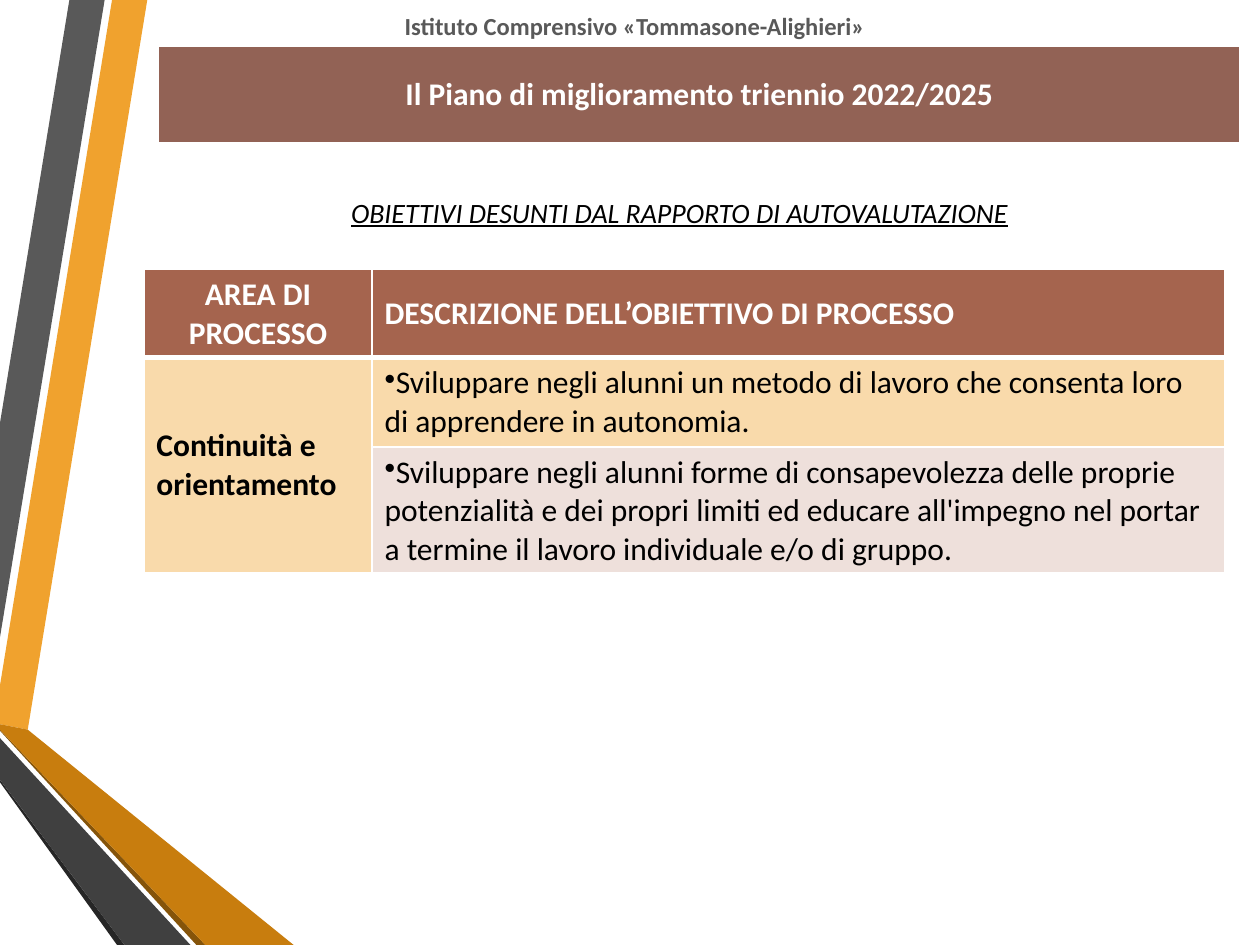
from lxml.etree import SubElement
from pptx import Presentation
from pptx.dml.color import RGBColor
from pptx.enum.text import MSO_ANCHOR, MSO_AUTO_SIZE, PP_ALIGN
from pptx.oxml.ns import qn
from pptx.util import Cm, Pt

BANDS = [
    ("F0A22E", [(0, 13.82), (0, 14.6), (0.56, 14.71), (2.97, 0), (2.26, 0)]),
    ("595959", [(2.11, 0), (1.4, 0), (0, 8.53), (0, 12.85)]),
    ("262626", [(0, 15.72), (0, 15.77), (2.36, 19.05), (2.51, 19.05)]),
    ("85540A", [(0, 14.71), (0, 14.73), (3.96, 19.05), (4.14, 19.05)]),
    ("C87D0E", [(0, 14.71), (4.14, 19.05), (5.92, 19.05), (0.56, 14.71), (0, 14.6)]),
    ("404040", [(0, 15.72), (2.51, 19.05), (3.84, 19.05), (0, 14.88)]),
]


def color(code):
    """Turn a hex string into a colour."""
    return RGBColor.from_string(code)


def add_band(slide, fill, points):
    """Draw one filled polygon of the side ribbon."""
    dots = [(Cm(x), Cm(y)) for x, y in points]
    build = slide.shapes.build_freeform(*dots[0])
    build.add_line_segments(dots[1:], close=True)
    band = build.convert_to_shape()
    band.shadow.inherit = False
    band.fill.solid()
    band.fill.fore_color.rgb = color(fill)
    band.line.fill.background()


def add_run(para, text, size, ink, bold=False, slant=False, align=PP_ALIGN.LEFT):
    """Add a styled run to a paragraph."""
    para.alignment = align
    run = para.add_run()
    run.text = text
    font = run.font
    font.name, font.size, font.bold = "Calibri", Pt(size), bold
    font.italic = font.underline = slant
    font.color.rgb = color(ink)


def add_label(slide, box, text, size, ink, **style):
    """Add a centred line of text."""
    frame = slide.shapes.add_textbox(*map(Cm, box)).text_frame
    frame.word_wrap = True
    frame.auto_size = MSO_AUTO_SIZE.SHAPE_TO_FIT_TEXT
    add_run(frame.paragraphs[0], text, size, ink, align=PP_ALIGN.CENTER, **style)


def add_grid(slide, left, top, cols, rows):
    """Add a plain table with the given column and row sizes."""
    box = map(Cm, (left, top, sum(cols), sum(rows)))
    table = slide.shapes.add_table(len(rows), len(cols), *box).table
    table.first_row = table.horz_banding = False
    for col, width in zip(table.columns, cols):
        col.width = Cm(width)
    for row, height in zip(table.rows, rows):
        row.height = Cm(height)
    return table


def set_edges(cell, base=1):
    """Give a cell white borders with a chosen bottom width."""
    props = cell._tc.get_or_add_tcPr()
    for side, width in zip("LRTB", (1, 1, 1, base)):
        line = SubElement(props, qn(f"a:ln{side}"), w=str(Pt(width)))
        SubElement(SubElement(line, qn("a:solidFill")), qn("a:srgbClr"), val="FFFFFF")


def fill_cell(cell, fill, text, ink, bullet=False, **style):
    """Fill a cell and write its text."""
    cell.fill.solid()
    cell.fill.fore_color.rgb = color(fill)
    cell.vertical_anchor = MSO_ANCHOR.MIDDLE
    para = cell.text_frame.paragraphs[0]
    if bullet:
        props = para._p.get_or_add_pPr()
        props.set("marL", "0")
        props.set("indent", "0")
        SubElement(props, qn("a:buChar"), char="•")
    add_run(para, text, 18, ink, **style)


def add_goals(slide):
    """Add the table of process goals."""
    table = add_grid(slide, 2.9, 5.43, (4.6, 17.2), (1.78, 1.8, 2.52))
    for index, cell in enumerate(table.iter_cells()):
        set_edges(cell, 3 if index < 2 else 1)
    table.cell(1, 0).merge(table.cell(2, 0))
    fill_cell(table.cell(0, 0), "A5644E", "AREA DI PROCESSO", "FFFFFF",
              bold=True, align=PP_ALIGN.CENTER)
    fill_cell(table.cell(0, 1), "A5644E", "DESCRIZIONE DELL’OBIETTIVO DI PROCESSO",
              "FFFFFF", bold=True)
    fill_cell(table.cell(1, 0), "F9DAAB", "Continuità e orientamento", "000000", bold=True)
    goals = [
        ("F9DAAB", "Sviluppare negli alunni un metodo di lavoro che consenta loro "
                   "di apprendere in autonomia."),
        ("EEE0DB", "Sviluppare negli alunni forme di consapevolezza delle proprie "
                   "potenzialità e dei propri limiti ed educare all'impegno nel portar "
                   "a termine il lavoro individuale e/o di gruppo."),
    ]
    for row, (fill, text) in enumerate(goals, 1):
        fill_cell(table.cell(row, 1), fill, text, "000000", bullet=True)


def main():
    """Build the slide and save it."""
    deck = Presentation()
    deck.slide_width, deck.slide_height = Cm(25.4), Cm(19.05)
    slide = deck.slides.add_slide(deck.slide_layouts[6])
    for fill, points in BANDS:
        add_band(slide, fill, points)
    add_label(slide, (3.3, 3.81, 20.8, 0.94),
              "OBIETTIVI DESUNTI DAL RAPPORTO DI AUTOVALUTAZIONE", 16, "000000", slant=True)
    add_goals(slide)
    add_label(slide, (2.9, 0.1, 19.8, 0.86),
              "Istituto Comprensivo «Tommasone-Alighieri»", 14, "595959", bold=True)
    banner = add_grid(slide, 3.2, 0.94, (21.8,), (1.93,))
    fill_cell(banner.cell(0, 0), "926255", "Il Piano di miglioramento triennio 2022/2025",
              "FFFFFF", bold=True, align=PP_ALIGN.CENTER)
    deck.save("out.pptx")


if __name__ == "__main__":
    main()
